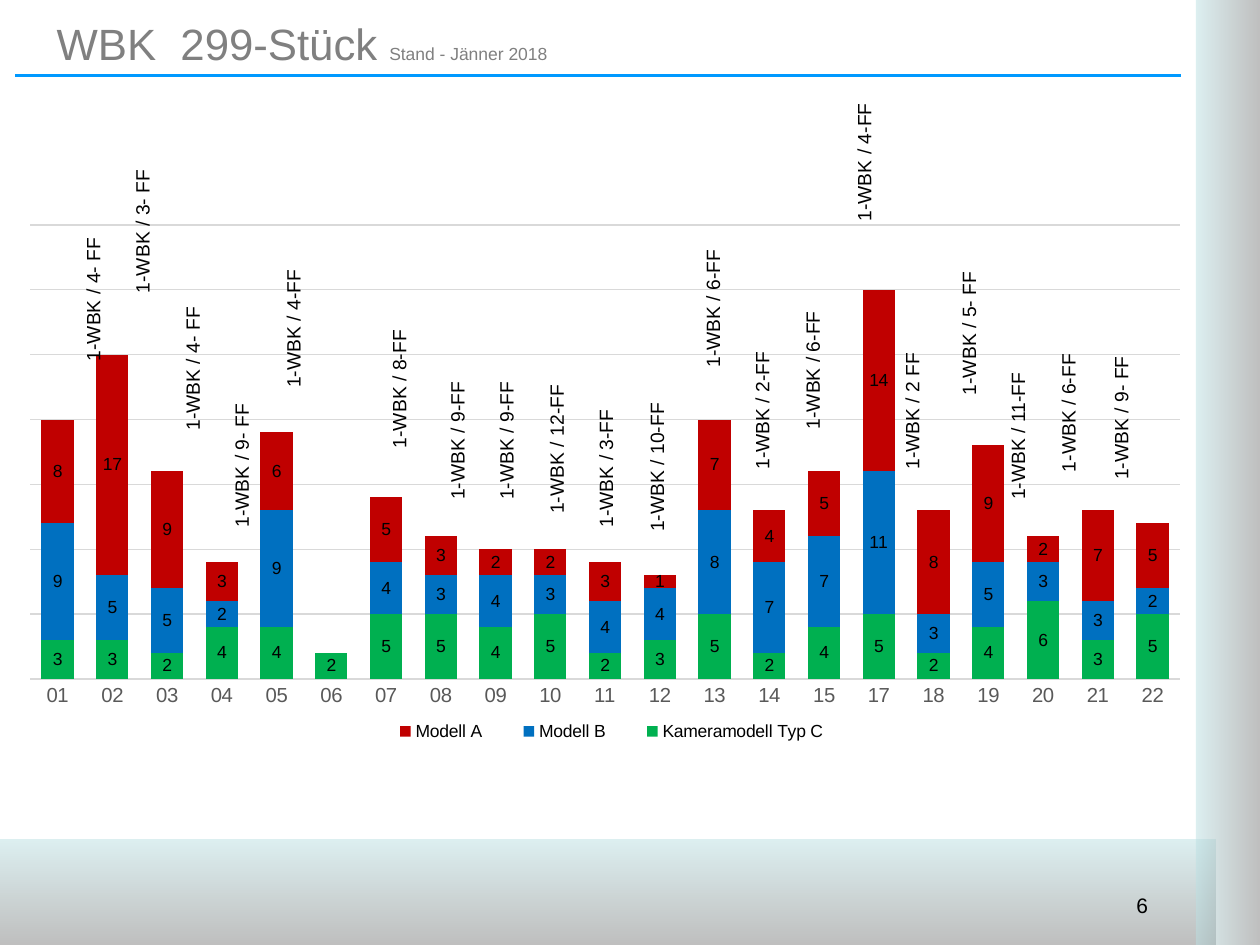
from lxml import etree
from pptx import Presentation
from pptx.chart.data import CategoryChartData
from pptx.dml.color import RGBColor
from pptx.enum import chart as ch, shapes, text
from pptx.oxml import parse_xml
from pptx.oxml.ns import nsdecls, qn
from pptx.util import Pt

FONT = "Arial"
TITLE = [("WBK  299-Stück ", 25), ("Stand - Jänner 2018", 10)]
PAGE = "6"
BANDS = [((0, 479.5, 694.8, 60.5), 270), ((683.3, 0, 36.7, 540), 0)]
BAND_COLORS = ["BBE0E3", "808080"]
DISTRICTS = [f"{n:02d}" for n in range(1, 23) if n != 16]
SERIES = [
    ("Kameramodell Typ C", "00B050",
     [3, 3, 2, 4, 4, 2, 5, 5, 4, 5, 2, 3, 5, 2, 4, 5, 2, 4, 6, 3, 5]),
    ("Modell B", "0070C0",
     [9, 5, 5, 2, 9, None, 4, 3, 4, 3, 4, 4, 8, 7, 7, 11, 3, 5, 3, 3, 2]),
    ("Modell A", "C00000",
     [8, 17, 9, 3, 6, None, 5, 3, 2, 2, 3, 1, 7, 4, 5, 14, 8, 9, 2, 7, 5]),
]
LABEL_LENGTH, LABEL_HEIGHT = 96.5, 21
LABELS = [
    ("4- FF", 53.3, 213.5), ("3- FF", 81.4, 174.6), ("4- FF", 110.2, 253.1),
    ("9- FF", 138.2, 308.5), ("4-FF", 167.8, 228.6), ("8-FF", 228.2, 263.2),
    ("9-FF", 261.4, 292.7), ("9-FF", 289.4, 292.7), ("12-FF", 318.2, 300.6),
    ("3-FF", 346.3, 308.5), ("10-FF", 375.5, 311, 126), ("6-FF", 407.5, 217.1),
    ("2-FF", 435.6, 275.4), ("6-FF", 464.4, 252.4), ("4-FF", 493.9, 133.6),
    ("2 FF", 521.3, 275.4), ("5- FF", 553.7, 232.9), ("11-FF", 581.8, 292.7),
    ("6-FF", 610.6, 276.8), ("9- FF", 640.8, 281.2),
]


def rgb(color):
    return RGBColor.from_string(color)


def style(font, size, color):
    font.name, font.size, font.bold = FONT, Pt(size), False
    font.color.rgb = rgb(color)


def add_run(p, words, size, color="000000"):
    r = p.add_run()
    r.text = words
    style(r.font, size, color)


def add_text(s, box, words, size, align=text.PP_ALIGN.LEFT):
    sp = s.shapes.add_textbox(*map(Pt, box))
    tf = sp.text_frame
    tf.word_wrap = True
    tf.auto_size = text.MSO_AUTO_SIZE.SHAPE_TO_FIT_TEXT
    p = tf.paragraphs[0]
    p.alignment = align
    add_run(p, words, size)
    return sp


def add_band(s, box, angle):
    sp = s.shapes.add_shape(shapes.MSO_SHAPE.RECTANGLE, *map(Pt, box))
    sp.shadow.inherit = False
    sp.line.fill.background()
    sp.fill.gradient()
    sp.fill.gradient_angle = angle
    for stop, color, position in zip(sp.fill.gradient_stops, BAND_COLORS, (0, 1)):
        stop.color.rgb = rgb(color)
        stop.position = position
    for clr in sp._element.spPr.iter(qn("a:srgbClr")):
        etree.SubElement(clr, qn("a:alpha")).set("val", "49000")


def layout_xml(x, y, w, h, inner=False):
    target = '<c:layoutTarget val="inner"/>' if inner else ""
    return parse_xml(
        f'<c:layout {nsdecls("c")}><c:manualLayout>{target}'
        '<c:xMode val="edge"/><c:yMode val="edge"/>'
        f'<c:x val="{x}"/><c:y val="{y}"/><c:w val="{w}"/><c:h val="{h}"/>'
        '</c:manualLayout></c:layout>')


def set_layout(parent, layout, index):
    for old in parent.findall(qn("c:layout")):
        parent.remove(old)
    parent.insert(index, layout)


def add_stock_chart(s):
    data = CategoryChartData()
    data.categories = DISTRICTS
    for name, _, values in SERIES:
        data.add_series(name, values)
    chart = s.shapes.add_chart(ch.XL_CHART_TYPE.COLUMN_STACKED, Pt(6.5), Pt(126.7),
                               Pt(672.5), Pt(308.2), data).chart
    chart.has_title = False
    style(chart.font, 10, "000000")

    plot = chart.plots[0]
    plot.gap_width, plot.overlap, plot.vary_by_categories = 70, 100, False
    for series, (_, color, _) in zip(plot.series, SERIES):
        series.format.fill.solid()
        series.format.fill.fore_color.rgb = rgb(color)
        series.data_labels.show_value = True
        style(series.data_labels.font, 10, "000000")

    cat = chart.category_axis
    cat.major_tick_mark = cat.minor_tick_mark = ch.XL_TICK_MARK.NONE
    cat.format.line.fill.background()
    style(cat.tick_labels.font, 11.6, "595959")
    val = chart.value_axis
    val.visible = False
    val.minimum_scale, val.maximum_scale, val.major_unit = 0, 35, 5
    val.has_major_gridlines = True
    val.major_gridlines.format.line.color.rgb = rgb("D9D9D9")
    val.major_gridlines.format.line.width = Pt(0.73)

    chart.has_legend = True
    chart.legend.position = ch.XL_LEGEND_POSITION.RIGHT
    chart.legend.include_in_layout = False
    style(chart.legend.font, 10, "000000")
    set_layout(chart.legend._element, layout_xml(0.3, 0.91, 0.42, 0.07), 1)
    area = chart._chartSpace.find(".//" + qn("c:plotArea"))
    set_layout(area, layout_xml(0.016, 0.006, 0.977, 0.842, True), 0)


def main():
    prs = Presentation()
    prs.slide_width, prs.slide_height = Pt(720), Pt(540)
    s = prs.slides.add_slide(prs.slide_layouts[5])

    for box, angle in BANDS:
        add_band(s, box, angle)
    add_text(s, (612, 506.2, 51.1, 22.3), PAGE, 12, text.PP_ALIGN.RIGHT)

    title = s.shapes.title
    title.left, title.top, title.width, title.height = map(Pt, (25.2, 0, 622.8, 49))
    tf = title.text_frame
    tf.auto_size = text.MSO_AUTO_SIZE.NONE
    tf.vertical_anchor = text.MSO_ANCHOR.MIDDLE
    p = tf.paragraphs[0]
    p.alignment = text.PP_ALIGN.LEFT
    for words, size in TITLE:
        add_run(p, words, size, "808080")

    rule = s.shapes.add_connector(shapes.MSO_CONNECTOR.STRAIGHT,
                                  Pt(8.6), Pt(43.2), Pt(674.6), Pt(43.2))
    rule.line.color.rgb = rgb("0099FF")
    rule.line.width = Pt(2)
    etree.SubElement(rule._element.spPr, qn("a:effectLst"))

    add_stock_chart(s)
    for words, center, bottom, *length in LABELS:
        w = length[0] if length else LABEL_LENGTH
        box = (center - w / 2, bottom - (w + LABEL_HEIGHT) / 2, w, LABEL_HEIGHT)
        add_text(s, box, "1-WBK / " + words, 11).rotation = 270

    prs.save("out.pptx")


if __name__ == "__main__":
    main()
